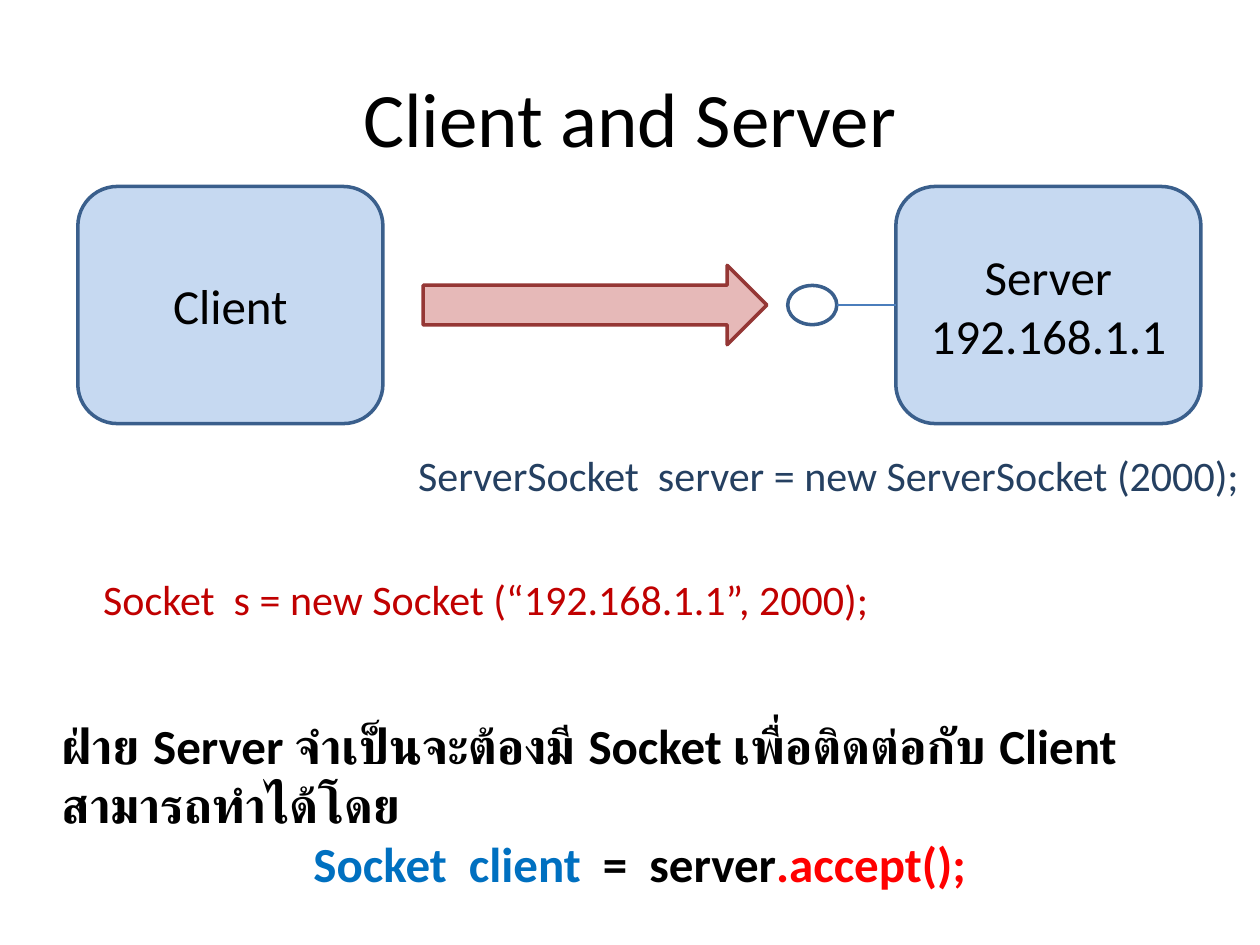
from lxml.etree import SubElement
from pptx import Presentation
from pptx.dml.color import RGBColor
from pptx.enum.shapes import MSO_CONNECTOR as Link, MSO_SHAPE as Preset
from pptx.enum.text import MSO_ANCHOR as Anchor, PP_ALIGN as Align
from pptx.oxml.ns import qn
from pptx.util import Cm, Pt

BLACK = "000000"
NODE_FILL, NODE_LINE = "C6D9F1", "3A5F8C"


def colour(value):
    return RGBColor.from_string(value)


def style_run(run, size, value=BLACK, bold=False):
    run.font.name = "Calibri"
    run.font.size = Pt(size)
    run.font.bold = bold
    run.font.color.rgb = colour(value)


def style_frame(frame, size, value=BLACK, align=Align.LEFT, bold=False):
    for paragraph in frame.paragraphs:
        paragraph.alignment = align
        for run in paragraph.runs:
            style_run(run, size, value, bold)


def add_outlined(slide, preset, left, top, width, height, fill, line):
    outlined = slide.shapes.add_shape(preset, Cm(left), Cm(top), Cm(width), Cm(height))
    outlined.shadow.inherit = False
    outlined.fill.solid()
    outlined.fill.fore_color.rgb = colour(fill)
    outlined.line.color.rgb = colour(line)
    outlined.line.width = Pt(2)
    return outlined


def add_text(slide, left, top, width, height, text, size, value=BLACK,
             align=Align.LEFT, anchor=Anchor.TOP, wrap=True, bold=False):
    frame = slide.shapes.add_textbox(Cm(left), Cm(top), Cm(width), Cm(height)).text_frame
    frame.word_wrap = wrap
    frame.vertical_anchor = anchor
    frame.text = text
    style_frame(frame, size, value, align, bold)
    return frame


def add_node(slide, left, top, width, height, label):
    node = add_outlined(slide, Preset.ROUNDED_RECTANGLE, left, top, width, height,
                        NODE_FILL, NODE_LINE)
    node.text_frame.text = label
    node.text_frame.vertical_anchor = Anchor.MIDDLE
    style_frame(node.text_frame, 28, align=Align.CENTER)
    return node


def draw_connection(slide, left, top, width, height):
    node_width = 6.15
    middle = top + height / 2
    server_left = left + width - node_width
    server = add_node(slide, server_left, top, node_width, height, "Server\n192.168.1.1")

    port_left, port_width, port_height = left + 14.31, 0.99, 0.79
    add_outlined(slide, Preset.OVAL, port_left, middle - port_height / 2,
                 port_width, port_height, "FFFFFF", NODE_LINE)
    port_link = slide.shapes.add_connector(Link.STRAIGHT, Cm(port_left + port_width),
                                           Cm(middle), Cm(server_left), Cm(middle))
    port_link.end_connect(server, 1)
    port_link.line.color.rgb = colour("4B7EBC")
    port_link.line.width = Pt(0.75)
    SubElement(port_link._element.spPr, qn("a:effectLst"))

    add_node(slide, left, top, node_width, height, "Client")
    request_height = 1.6
    add_outlined(slide, Preset.RIGHT_ARROW, left + 6.96, middle - request_height / 2,
                 6.93, request_height, "E6B9B8", "953735")


def draw_socket_code(slide, left, top):
    add_text(slide, left + 6.35, top, 17.22, 1.27,
             "ServerSocket  server = new ServerSocket (2000);", 24, "254061", wrap=False)
    add_text(slide, left, top + 2.49, 16.03, 1.27,
             "Socket  s = new Socket (“192.168.1.1”, 2000);", 24, "C00000", wrap=False)


def draw_accept_note(slide, left, top, width, height):
    note = add_text(slide, left, top, width, height,
                    "ฝ่าย Server จำเป็นจะต้องมี Socket เพื่อติดต่อกับ Client สามารถทำได้โดย",
                    28, bold=True)
    accept_call = note.add_paragraph()
    accept_call._p.get_or_add_pPr().set("marL", str(Cm(5.08)))
    for words, value in (("Socket  client  ", "0070C0"),
                         ("=  server", BLACK),
                         (".accept();", "FF0000")):
        part = accept_call.add_run()
        part.text = words
        style_run(part, 28, value, True)


def main():
    deck = Presentation()
    deck.slide_width, deck.slide_height = Cm(25.4), Cm(19.05)
    slide = deck.slides.add_slide(deck.slide_layouts[6])
    add_text(slide, 1.27, 0.76, 22.86, 3.18, "Client and Server", 44,
             align=Align.CENTER, anchor=Anchor.MIDDLE)
    draw_connection(slide, 1.57, 3.76, 22.64, 4.78)
    draw_socket_code(slide, 1.83, 8.94)
    draw_accept_note(slide, 0.99, 14.3, 24.41, 2.64)
    deck.save("out.pptx")


if __name__ == "__main__":
    main()
